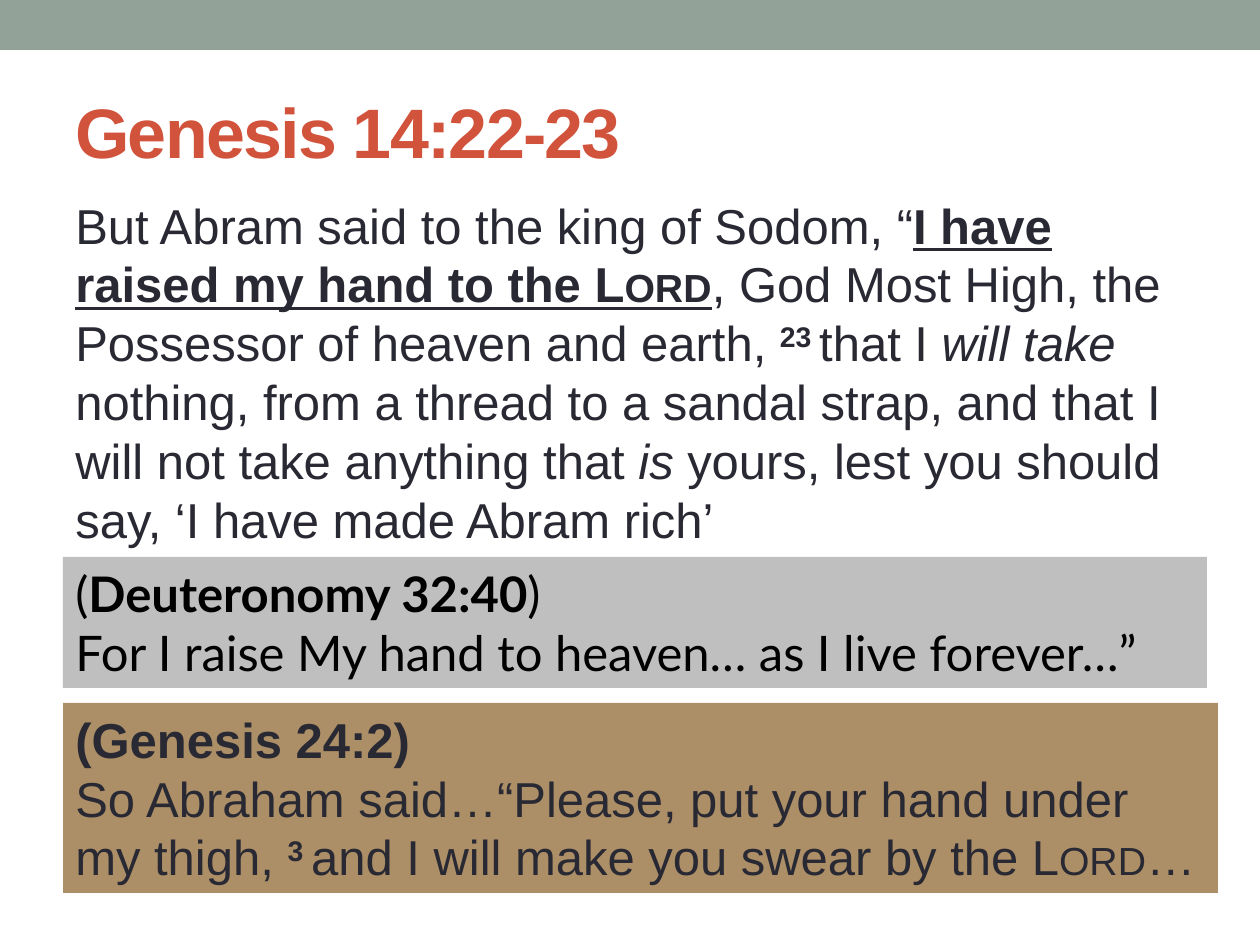
from pptx import Presentation
from pptx.dml.color import RGBColor
from pptx.enum.shapes import MSO_SHAPE as Shape
from pptx.enum.text import MSO_ANCHOR as Anchor, MSO_AUTO_SIZE as AutoSize
from pptx.util import Pt

PX = 914400 / 126
COLORS = {"band": "93A299", "title": "D2533C", "ink": "292934",
          "black": "000000", "gray": "BFBFBF", "tan": "AD8F67"}

VERSE = [[
    ("But Abram said to the king of Sodom, “", ""),
    ("I have raised my hand to the ", "bold underline"),
    ("Lord", "bold underline small"),
    (", God Most High, the Possessor of heaven and earth, ", ""),
    ("23 ", "bold raised"),
    ("that I ", ""),
    ("will take", "italic"),
    (" nothing, from a thread to a sandal strap, and that I will not take anything that ", ""),
    ("is", "italic"),
    (" yours, lest you should say, ‘I have made Abram rich’", ""),
]]
DEUTERONOMY = [
    [("(", ""), ("Deuteronomy 32:40", "bold"), (")", "")],
    [("For I raise My hand to heaven… as I live forever…”", "")],
]
GENESIS = [
    [("(Genesis 24:2)", "bold")],
    [("So Abraham said…“Please, put your hand under my thigh, ", ""),
     ("3 ", "bold raised"),
     ("and I will make you swear by the ", ""),
     ("Lord", "small"),
     ("…", "")],
]


def emu(*lengths):
    return [round(length * PX) for length in lengths]


def rgb(name):
    return RGBColor.from_string(COLORS[name])


def add_span(para, text, style):
    """Add a run; style is a list of words such as "bold small"."""
    span = para.add_run()
    span.text = text
    words = style.split()
    for word in words:
        if word in ("bold", "italic", "underline"):
            setattr(span.font, word, True)
    props = span._r.get_or_add_rPr()
    if "small" in words:
        props.set("cap", "small")
    if "raised" in words:
        props.set("baseline", "30000")
    return span


def write(box, paragraphs, color, face="Arial", size=28):
    frame = box.text_frame
    frame.word_wrap = True
    for index, spans in enumerate(paragraphs):
        para = frame.add_paragraph() if index else frame.paragraphs[0]
        para.font.name = face
        para.font.size = Pt(size)
        para.font.color.rgb = rgb(color)
        for text, style in spans:
            add_span(para, text, style)
    return frame


def add_panel(page, area, fill):
    panel = page.shapes.add_textbox(*emu(*area))
    panel.fill.solid()
    panel.fill.fore_color.rgb = rgb(fill)
    return panel


def add_band(page, area):
    band = page.shapes.add_shape(Shape.RECTANGLE, *emu(*area))
    band.shadow.inherit = False
    band.fill.solid()
    band.fill.fore_color.rgb = rgb("band")
    band.line.fill.background()


def add_title(page, area, text):
    box = page.shapes.add_textbox(*emu(*area))
    frame = write(box, [[(text, "bold")]], "title", size=40)
    frame.vertical_anchor = Anchor.MIDDLE
    frame.paragraphs[0].runs[0]._r.get_or_add_rPr().set("spc", "-100")


def add_verse(page, area, paragraphs):
    write(page.shapes.add_textbox(*emu(*area)), paragraphs, "ink")


def add_quote(page, area, fill, paragraphs, color, face="Arial"):
    frame = write(add_panel(page, area, fill), paragraphs, color, face)
    frame.auto_size = AutoSize.SHAPE_TO_FIT_TEXT


def main():
    deck = Presentation()
    deck.slide_width, deck.slide_height = emu(1260, 945)
    page = deck.slides.add_slide(deck.slide_layouts[6])
    add_band(page, (0, 0, 1260, 50))
    add_title(page, (63, 63, 1134, 136), "Genesis 14:22-23")
    add_verse(page, (63, 189, 1134, 368), VERSE)
    add_quote(page, (63, 557, 1144, 131), "gray", DEUTERONOMY, "black", "Lato")
    add_quote(page, (63, 703, 1155, 190), "tan", GENESIS, "ink")
    deck.save("out.pptx")


if __name__ == "__main__":
    main()
